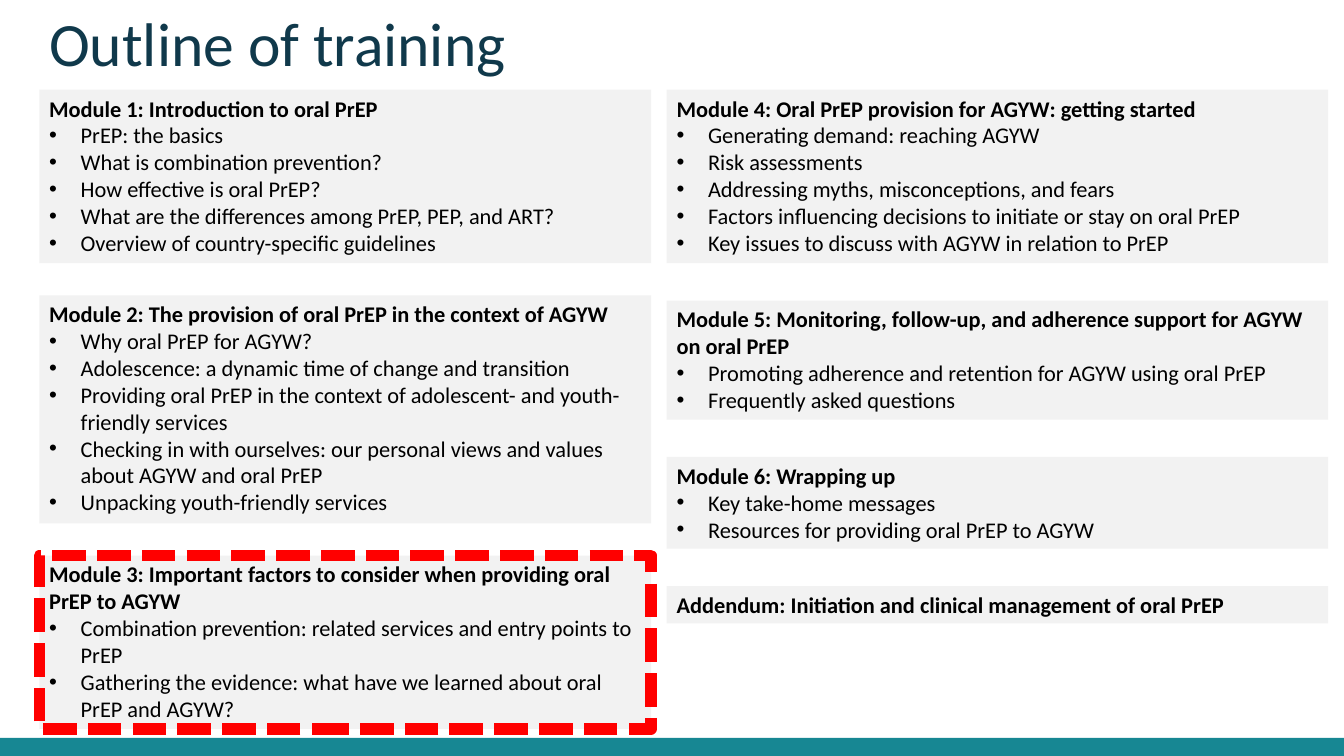
from lxml.etree import SubElement
from pptx import Presentation
from pptx.dml.color import RGBColor
from pptx.enum.dml import MSO_LINE
from pptx.enum.shapes import MSO_SHAPE
from pptx.enum.text import MSO_ANCHOR, MSO_AUTO_SIZE, PP_ALIGN
from pptx.oxml.ns import qn
from pptx.util import Pt

TITLE = "Outline of training"
LEFT_MODULES = [
    ("Module 1: Introduction to oral PrEP", 6, [
        "PrEP: the basics",
        "What is combination prevention?",
        "How effective is oral PrEP?",
        "What are the differences among PrEP, PEP, and ART?",
        "Overview of country-specific guidelines",
    ]),
    ("Module 2: The provision of oral PrEP in the context of AGYW", 8, [
        "Why oral PrEP for AGYW?",
        "Adolescence: a dynamic time of change and transition",
        "Providing oral PrEP in the context of adolescent- and youth- friendly services",
        "Checking in with ourselves: our personal views and values about AGYW and oral PrEP",
        "Unpacking youth-friendly services",
    ]),
    ("Module 3: Important factors to consider when providing oral PrEP to AGYW", 6, [
        "Combination prevention: related services and entry points to PrEP",
        "Gathering the evidence: what have we learned about oral PrEP and AGYW?",
    ]),
]
RIGHT_MODULES = [
    ("Module 4: Oral PrEP provision for AGYW: getting started", 6, [
        "Generating demand: reaching AGYW",
        "Risk assessments",
        "Addressing myths, misconceptions, and fears",
        "Factors influencing decisions to initiate or stay on oral PrEP",
        "Key issues to discuss with AGYW in relation to PrEP",
    ]),
    ("Module 5: Monitoring, follow-up, and adherence support for AGYW on oral PrEP", 4, [
        "Promoting adherence and retention for AGYW using oral PrEP",
        "Frequently asked questions",
    ]),
    ("Module 6: Wrapping up", 3, [
        "Key take-home messages",
        "Resources for providing oral PrEP to AGYW",
    ]),
    ("Addendum: Initiation and clinical management of oral PrEP", 1, []),
]
CURRENT = LEFT_MODULES[2]
COLUMNS = [(28.1, 437, 23, LEFT_MODULES), (476.2, 472.5, 26.7, RIGHT_MODULES)]
FIRST_TOP, LINE_HEIGHT, PADDING, INDENT = 64.1, 19.45, 7.2, 22.5


def color(hex_string):
    return RGBColor.from_string(hex_string)


def add_panel(left, top, width, height, fill):
    panel = slide.shapes.add_shape(
        MSO_SHAPE.RECTANGLE, Pt(left), Pt(top), Pt(width), Pt(height))
    panel.shadow.inherit = False
    panel.fill.solid()
    panel.fill.fore_color.rgb = color(fill)
    panel.line.fill.background()
    return panel


def write(paragraph, text, size=16, ink="000000", bold=False, bullet=False, spacing=None):
    paragraph.alignment = PP_ALIGN.LEFT
    if spacing:
        paragraph.line_spacing = Pt(spacing)
    if bullet:
        properties = paragraph._p.get_or_add_pPr()
        properties.set("marL", str(Pt(INDENT)))
        properties.set("indent", str(-Pt(INDENT)))
        SubElement(properties, qn("a:buFont")).set("typeface", "Arial")
        SubElement(properties, qn("a:buChar")).set("char", "•")
    run = paragraph.add_run()
    run.text = text
    run.font.name = "Calibri"
    run.font.size = Pt(size)
    run.font.bold = bold
    run.font.color.rgb = color(ink)


presentation = Presentation()
presentation.slide_width, presentation.slide_height = Pt(960), Pt(540)
slide = presentation.slides.add_slide(presentation.slide_layouts[6])

add_panel(0, 527, 960, 13, "178793")

heading = slide.shapes.add_textbox(Pt(28.1), Pt(7.9), Pt(864), Pt(76.3)).text_frame
heading.word_wrap = True
write(heading.paragraphs[0], TITLE, size=44, ink="10394B", spacing=44.8)

for left, width, gap, modules in COLUMNS:
    top = FIRST_TOP
    for module in modules:
        name, lines, topics = module
        height = PADDING + LINE_HEIGHT * lines
        panel = add_panel(left, top, width, height, "F2F2F2")
        if module is CURRENT:
            panel.line.color.rgb = color("FF0000")
            panel.line.width = Pt(8)
            panel.line.dash_style = MSO_LINE.SQUARE_DOT
        frame = panel.text_frame
        frame.word_wrap = True
        frame.auto_size = MSO_AUTO_SIZE.SHAPE_TO_FIT_TEXT
        frame.vertical_anchor = MSO_ANCHOR.TOP
        write(frame.paragraphs[0], name, bold=True)
        for topic in topics:
            write(frame.add_paragraph(), topic, bullet=True)
        top += height + gap

presentation.save("out.pptx")
